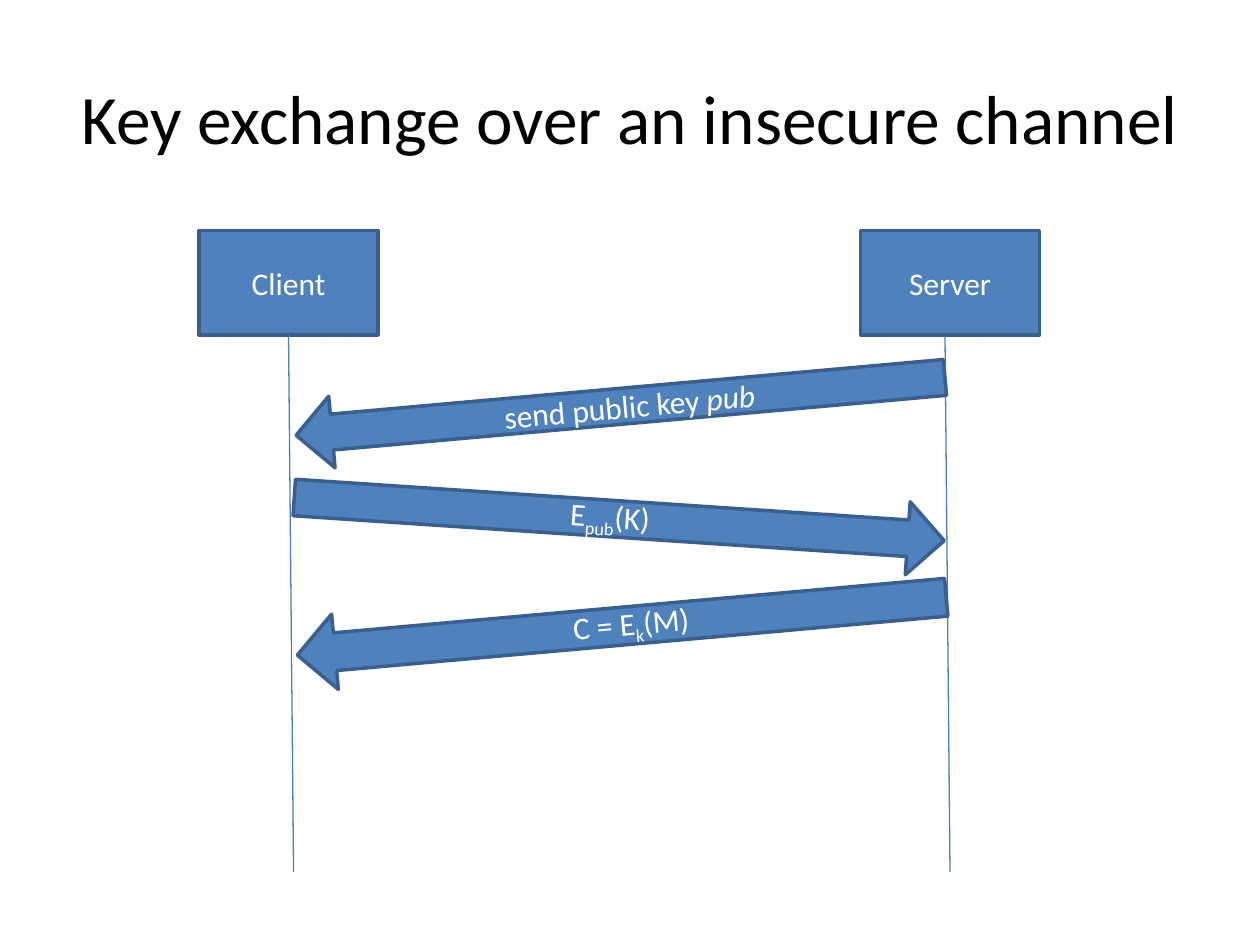
from lxml import etree
from pptx import Presentation
from pptx.dml.color import RGBColor
from pptx.enum.shapes import MSO_CONNECTOR, MSO_SHAPE
from pptx.enum.text import MSO_ANCHOR, PP_ALIGN
from pptx.oxml.ns import qn
from pptx.util import Inches, Pt

RECT, LEFT, RIGHT = MSO_SHAPE.RECTANGLE, MSO_SHAPE.LEFT_ARROW, MSO_SHAPE.RIGHT_ARROW
STRAIGHT = MSO_CONNECTOR.STRAIGHT
MIDDLE, CENTER = MSO_ANCHOR.MIDDLE, PP_ALIGN.CENTER
BLACK = RGBColor(0x00, 0x00, 0x00)
WHITE = RGBColor(0xFF, 0xFF, 0xFF)
BLUE = RGBColor(0x4F, 0x81, 0xBD)
OUTLINE = RGBColor(0x3A, 0x5F, 0x8C)
LIFELINE = RGBColor(0x4B, 0x7E, 0xBC)
FONT = "Calibri"
BOX_TOP, BOX_W, BOX_H = 1.83, 1.42, 0.83
LIFELINE_TOP, LIFELINE_BOTTOM, LIFELINE_DRIFT = 2.67, 6.92, 0.04
ARROW_W = 5.17


def write_runs(sp, runs, size, color):
    """Write (text, style) runs centred in a shape; style is None, "italic" or "sub"."""
    tf = sp.text_frame
    tf.word_wrap = True
    tf.vertical_anchor = MIDDLE
    p = tf.paragraphs[0]
    p.alignment = CENTER
    for text, style in runs:
        r = p.add_run()
        r.text = text
        r.font.name = FONT
        r.font.size = Pt(size)
        r.font.color.rgb = color
        if style == "italic":
            r.font.italic = True
        elif style == "sub":
            r._r.get_or_add_rPr().set("baseline", "-25000")


def add_title(s, box, text):
    """Place the slide title in the given box."""
    sp = s.shapes.add_textbox(*map(Inches, box))
    write_runs(sp, [(text, None)], 39.6, BLACK)


def add_block(s, kind, box, runs, rotation=0):
    """Place a blue outlined shape with white text in the given box."""
    sp = s.shapes.add_shape(kind, *map(Inches, box))
    sp.rotation = rotation
    sp.shadow.inherit = False
    sp.fill.solid()
    sp.fill.fore_color.rgb = BLUE
    sp.line.color.rgb = OUTLINE
    sp.line.width = Pt(2)
    write_runs(sp, runs, 18, WHITE)
    return sp


def add_lifeline(s, x):
    """Draw the slightly slanted lifeline that starts at x."""
    line = s.shapes.add_connector(
        STRAIGHT, Inches(x), Inches(LIFELINE_TOP),
        Inches(x + LIFELINE_DRIFT), Inches(LIFELINE_BOTTOM))
    line.line.color.rgb = LIFELINE
    line.line.width = Pt(0.75)
    etree.SubElement(line._element.spPr, qn("a:effectLst"))
    return line


def add_participants(s):
    """Place the server and client boxes with their lifelines."""
    add_block(s, RECT, (6.83, BOX_TOP, BOX_W, BOX_H), [("Server", None)])
    client = add_block(s, RECT, (1.58, BOX_TOP, BOX_W, BOX_H), [("Client", None)])
    add_lifeline(s, 2.29).begin_connect(client, 2)
    add_lifeline(s, 7.5)


def add_messages(s):
    """Place the tilted message arrows between the lifelines."""
    messages = [
        (LEFT, 2.34, 2.94, 0.57, 354.9, [("send public key ", None), ("pub", "italic")]),
        (RIGHT, 2.33, 3.83, 0.58, 3.8, [("E", None), ("pub", "sub"), ("(K)", None)]),
        (LEFT, 2.35, 4.67, 0.6, 354.9, [("C = E", None), ("k", "sub"), ("(M)", None)]),
    ]
    for kind, x, y, h, rotation, runs in messages:
        add_block(s, kind, (x, y, ARROW_W, h), runs, rotation)


def main():
    """Build the key exchange slide and save it."""
    prs = Presentation()
    prs.slide_width, prs.slide_height = Inches(10), Inches(7.5)
    s = prs.slides.add_slide(prs.slide_layouts[6])
    add_title(s, (0.5, 0.3, 9, 1.25), "Key exchange over an insecure channel")
    add_participants(s)
    add_messages(s)
    prs.save("out.pptx")


if __name__ == "__main__":
    main()
